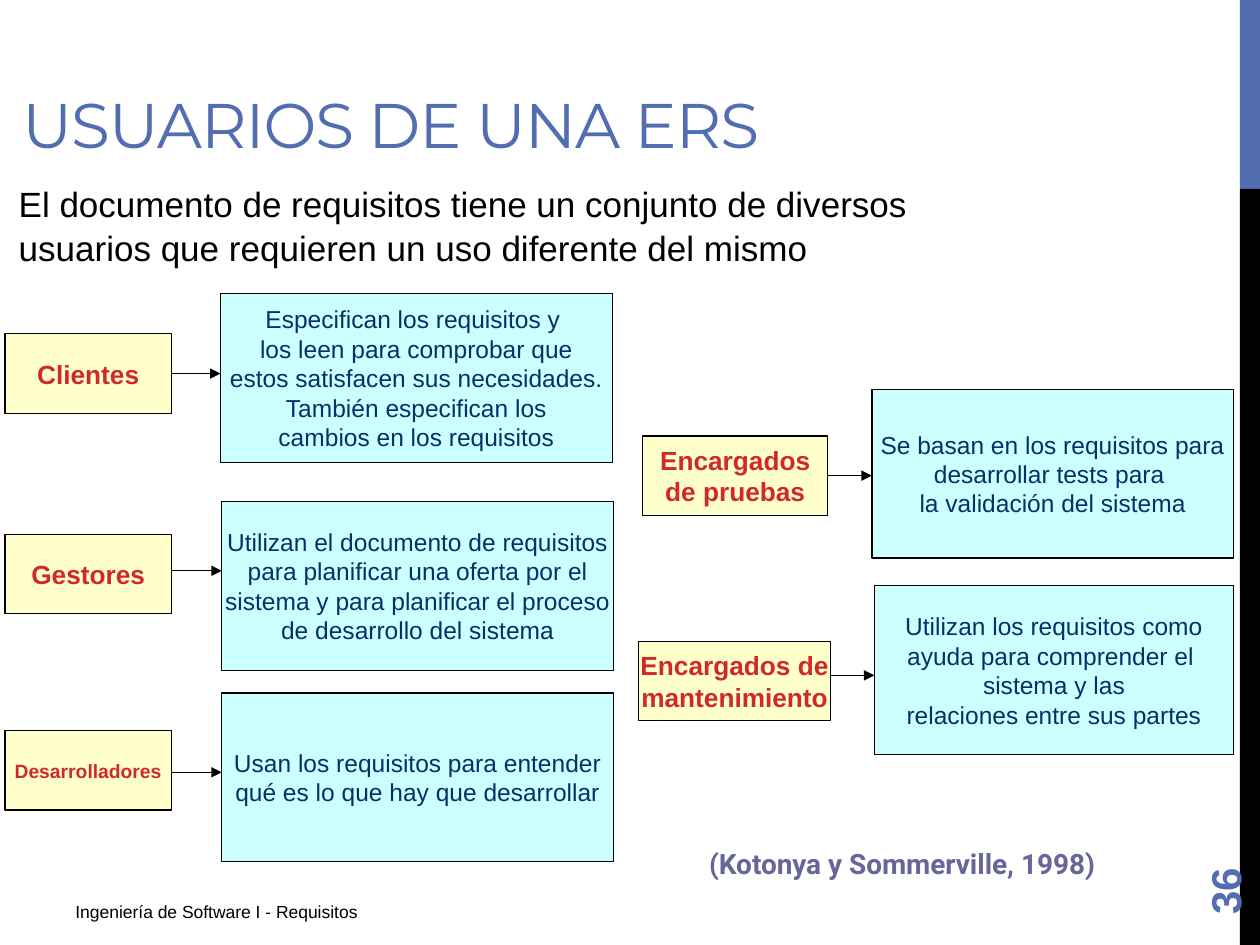
from pptx import Presentation
from pptx.dml.color import RGBColor
from pptx.enum.shapes import MSO_CONNECTOR as Connector, MSO_SHAPE as Shape
from pptx.enum.text import MSO_ANCHOR as Anchor, PP_ALIGN as Align
from pptx.oxml.ns import qn
from pptx.util import Inches, Pt
from lxml.etree import SubElement

COLUMNS, ROWS = 1000, 750
CELL = Inches(10) // COLUMNS
ROLE_HEIGHT, USE_HEIGHT = 63, 134

BLUE = RGBColor(0x52, 0x6D, 0xB0)
BLACK = RGBColor(0, 0, 0)
CREAM = RGBColor(0xFF, 0xFF, 0xCC)
CYAN = RGBColor(0xCC, 0xFF, 0xFF)
RED = RGBColor(0xD1, 0x28, 0x2E)
NAVY = RGBColor(0x00, 0x33, 0x66)
PURPLE = RGBColor(0x66, 0x66, 0x99)

LEFT_ROLE, LEFT_USE = (4, 132), 311
USERS = [
    (LEFT_ROLE, 265, ["Clientes"], 15, (175, LEFT_USE), 233, 296.5,
     ["Especifican los requisitos y ", "los leen para comprobar que",
      "estos satisfacen sus necesidades.", "También especifican los",
      "cambios en los requisitos"]),
    (LEFT_ROLE, 424, ["Gestores"], 15, (176, LEFT_USE), 398, 453,
     ["Utilizan el documento de requisitos", "para planificar una oferta por el",
      "sistema y para planificar el proceso", "de desarrollo del sistema"]),
    (LEFT_ROLE, 580, ["Desarrolladores"], 11, (176, LEFT_USE), 550, 613,
     ["Usan los requisitos para entender", "qué es lo que hay que desarrollar"]),
    ((510, 147), 346, ["Encargados", "de pruebas"], 15, (692, 287), 309, 377.5,
     ["Se basan en los requisitos para", "desarrollar tests para ",
      "la validación del sistema"]),
    ((507, 152), 509, ["Encargados de", "mantenimiento"], 15, (694, 285), 465, 536,
     ["Utilizan los requisitos como", "ayuda para comprender el ",
      "sistema y las", "relaciones entre sus partes"]),
]


def cells(*counts):
    return [round(count * CELL) for count in counts]


def write(shape, lines, size, color, bold=False, font="Arial"):
    para = shape.text_frame.paragraphs[0]
    for index, line in enumerate(lines):
        if index:
            para.add_line_break()
        span = para.add_run()
        span.text = line
        span.font.size = Pt(size)
        span.font.name = font
        span.font.bold = bold
        span.font.color.rgb = color
    return para


def add_text(page, box, text, size, color, bold=False, font="Arial", anchor=Anchor.TOP):
    shape = page.shapes.add_textbox(*cells(*box))
    shape.text_frame.word_wrap = True
    shape.text_frame.vertical_anchor = anchor
    return shape, write(shape, [text], size, color, bold, font)


def add_block(page, box, fill):
    block = page.shapes.add_shape(Shape.RECTANGLE, *cells(*box))
    block.shadow.inherit = False
    block.fill.solid()
    block.fill.fore_color.rgb = fill
    block.line.fill.background()
    return block


def add_label(page, box, fill, lines, size, color, bold=False):
    label = add_block(page, box, fill)
    label.line.color.rgb = BLACK
    label.line.width = Pt(0.75)
    label.text_frame.word_wrap = False
    label.text_frame.vertical_anchor = Anchor.MIDDLE
    write(label, lines, size, color, bold).alignment = Align.CENTER
    return label


def add_arrow(page, start, end):
    arrow = page.shapes.add_connector(Connector.STRAIGHT, *cells(*start, *end))
    arrow.line.color.rgb = BLACK
    arrow.line.width = Pt(0.75)
    SubElement(arrow.line._get_or_add_ln(), qn("a:tailEnd"), type="triangle")
    SubElement(arrow._element.spPr, qn("a:effectLst"))
    return arrow


def add_user(page, role_span, role_row, role, size, use_span, use_row, arrow_row, use):
    role_box = (role_span[0], role_row, role_span[1], ROLE_HEIGHT)
    use_box = (use_span[0], use_row, use_span[1], USE_HEIGHT)
    role_label = add_label(page, role_box, CREAM, role, size, RED, bold=True)
    add_label(page, use_box, CYAN, use, 14, NAVY)
    arrow = add_arrow(page, (sum(role_span), arrow_row), (use_span[0], arrow_row))
    if arrow_row == role_row + ROLE_HEIGHT / 2:
        arrow.begin_connect(role_label, 3)


def add_side_band(page, box):
    left, top, width, height = box
    blue_height = height / 5
    add_block(page, (left, top, width, blue_height), BLUE)
    add_block(page, (left, top + blue_height, width, height - blue_height), BLACK)


def add_heading(page, box):
    left, top, width, height = box
    _, title = add_text(page, box, "USUARIOS DE UNA ERS", 36, BLUE,
                        font="Montserrat", anchor=Anchor.BOTTOM)
    title.runs[0].font._element.set("spc", "-60")
    _, intro = add_text(
        page, (left - 3, top + height + 5, width - 13, 90),
        "El documento de requisitos tiene un conjunto de diversos "
        "usuarios que requieren un uso diferente del mismo", 20, BLACK)
    intro.line_spacing = 1.05
    intro.space_after = Pt(6)


def add_footer(page):
    add_text(page, (553, 667, 447, 37), "(Kotonya y Sommerville, 1998)", 16,
             PURPLE, bold=True, font="Roboto")
    add_text(page, (50, 710, 375, 31), "Ingeniería de Software I - Requisitos", 10, BLACK)
    number, _ = add_text(page, (900, 644, 144, 40), "36", 24, BLUE, bold=True,
                         anchor=Anchor.MIDDLE)
    number.rotation = 270


def main():
    deck = Presentation()
    deck.slide_width, deck.slide_height = cells(COLUMNS, ROWS)
    page = deck.slides.add_slide(deck.slide_layouts[6])
    add_side_band(page, (984, 0, 16, ROWS))
    add_heading(page, (8, -17, 833, 150))
    for user in USERS:
        add_user(page, *user)
    add_footer(page)
    deck.save("out.pptx")


if __name__ == "__main__":
    main()
